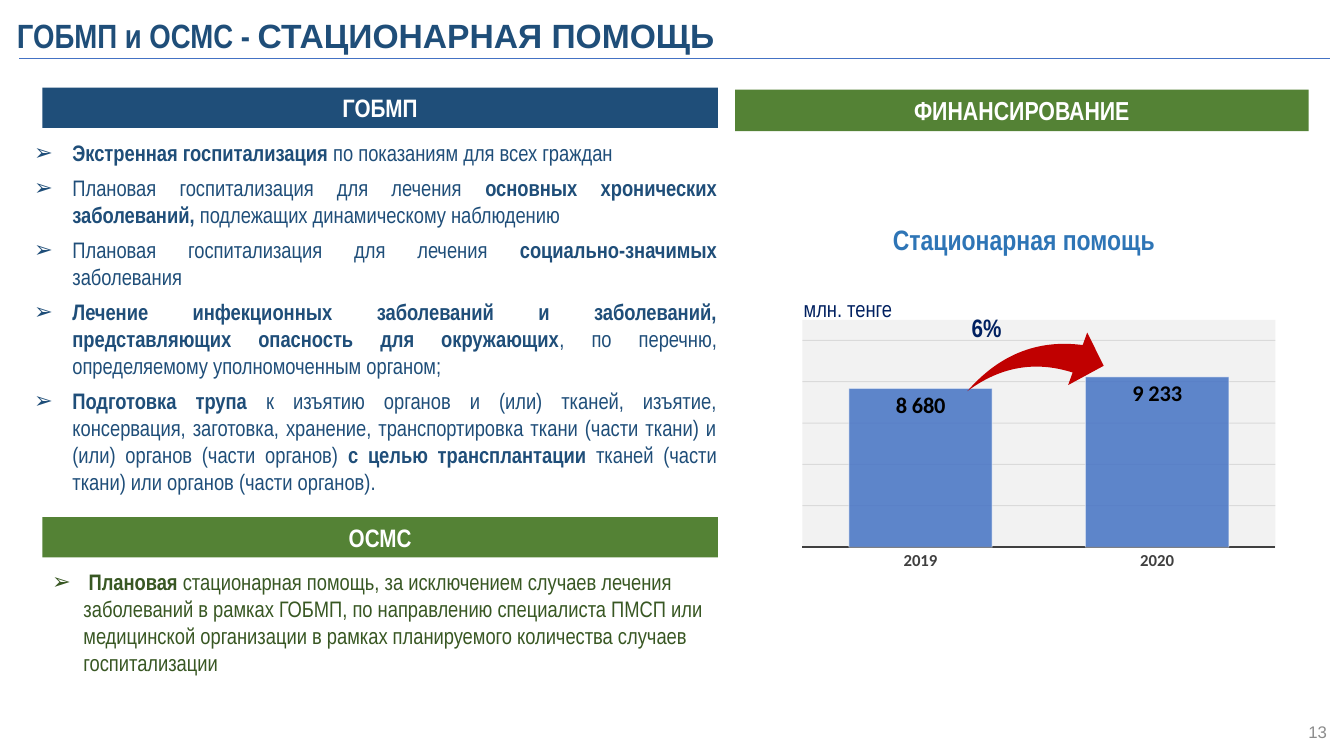
from lxml import etree
from pptx import Presentation
from pptx.chart.data import CategoryChartData
from pptx.dml.color import RGBColor
from pptx.enum.chart import XL_CHART_TYPE as ChartType, XL_LABEL_POSITION as LabelPos
from pptx.enum.chart import XL_TICK_MARK as Tick
from pptx.enum.shapes import MSO_CONNECTOR as Connector, MSO_SHAPE as Shape
from pptx.enum.text import MSO_ANCHOR as Anchor, PP_ALIGN as Align
from pptx.oxml import parse_xml
from pptx.oxml.ns import nsdecls, qn
from pptx.util import Inches, Pt

NAVY = RGBColor(0x1F, 0x4E, 0x79)
GREEN = RGBColor(0x54, 0x82, 0x35)
DARK_GREEN = RGBColor(0x38, 0x57, 0x23)
DEEP_BLUE = RGBColor(0x00, 0x20, 0x60)
BLUE = RGBColor(0x44, 0x72, 0xC4)
SKY = RGBColor(0x2E, 0x75, 0xB6)
RED = RGBColor(0xC0, 0x00, 0x00)
WHITE = RGBColor(0xFF, 0xFF, 0xFF)
BLACK = RGBColor(0x00, 0x00, 0x00)
GRAY = RGBColor(0x8C, 0x8C, 0x8C)
AXIS_GRAY = RGBColor(0x40, 0x40, 0x40)
GRID_GRAY = RGBColor(0x0D, 0x0D, 0x0D)
NARROW = "Arial Narrow"

# Each paragraph is a list of (text, bold) runs
GUARANTEED_CARE = [
    [("Экстренная госпитализация ", True), ("по показаниям для всех граждан", False)],
    [("Плановая госпитализация для лечения ", False),
     ("основных хронических заболеваний,", True),
     (" подлежащих динамическому наблюдению", False)],
    [("Плановая госпитализация для лечения ", False),
     ("социально-значимых", True), (" заболевания ", False)],
    [("Лечение инфекционных заболеваний и заболеваний, "
      "представляющих опасность для окружающих", True),
     (", по перечню, определяемому уполномоченным органом;", False)],
    [("Подготовка трупа", True),
     (" к изъятию органов и (или) тканей, изъятие, консервация, заготовка, "
      "хранение, транспортировка ткани (части ткани) и (или) органов "
      "(части органов) ", False),
     ("с целью трансплантации ", True),
     ("тканей (части ткани) или органов (части органов).", False)],
]
INSURED_CARE = [
    [(" Плановая", True),
     (" стационарная помощь, за исключением случаев лечения заболеваний в рамках "
      "ГОБМП, по направлению специалиста ПМСП или медицинской организации в рамках "
      "планируемого количества случаев госпитализации", False)],
]


def set_font(font, color, **values):
    font.color.rgb = color
    for name, value in values.items():
        setattr(font, name, value)


def add_run(paragraph, text, size, color, bold, font=NARROW):
    run = paragraph.add_run()
    run.text = text
    set_font(run.font, color, name=font, size=Pt(size), bold=bold)


def add_label(slide, box, text, size, color, bold=True, font=NARROW,
              align=Align.CENTER, anchor=Anchor.MIDDLE, wrap=True):
    frame = slide.shapes.add_textbox(*map(Inches, box)).text_frame
    frame.word_wrap = wrap
    frame.vertical_anchor = anchor
    paragraph = frame.paragraphs[0]
    paragraph.alignment = align
    add_run(paragraph, text, size, color, bold, font)
    return paragraph


def add_filled(slide, kind, box, color):
    shape = slide.shapes.add_shape(kind, *map(Inches, box))
    shape.shadow.inherit = False
    shape.fill.solid()
    shape.fill.fore_color.rgb = color
    shape.line.fill.background()
    return shape


def add_banner(slide, box, text, color, size=18):
    frame = add_filled(slide, Shape.RECTANGLE, box, color).text_frame
    frame.vertical_anchor = Anchor.TOP
    frame.paragraphs[0].alignment = Align.CENTER
    add_run(frame.paragraphs[0], text, size, WHITE, True)


def add_bullets(slide, box, items, color, indent, align, gap):
    frame = slide.shapes.add_textbox(*map(Inches, box)).text_frame
    frame.word_wrap = True
    for index, runs in enumerate(items):
        paragraph = frame.add_paragraph() if index else frame.paragraphs[0]
        paragraph.alignment = align
        paragraph.space_after = Pt(gap)
        props = paragraph._p.get_or_add_pPr()
        props.set("marL", str(Inches(indent)))
        props.set("indent", str(-Inches(indent)))
        etree.SubElement(props, qn("a:buFont"), typeface="Arial")
        etree.SubElement(props, qn("a:buChar"), char="➢")
        for text, bold in runs:
            add_run(paragraph, text, 16, color, bold)


def add_title_rule(slide):
    rule = slide.shapes.add_connector(
        Connector.STRAIGHT, Inches(13.19), Inches(0.58), Inches(0.19), Inches(0.58))
    rule.line.color.rgb = BLUE
    rule.line.width = Pt(0.5)
    etree.SubElement(rule._element.spPr, qn("a:effectLst"))


def set_line(line, color, width):
    line.color.rgb = color
    line.width = Pt(width)


def fade(chart, query, percent):
    """Set the opacity of the colours that the XPath query finds."""
    for color in chart.element.xpath(query):
        etree.SubElement(color, qn("a:alpha"), val=str(percent * 1000))


def frame_plot(chart, **layout):
    """Fix the inner plot area and give it a light background."""
    area = chart.element.xpath("c:chart/c:plotArea")[0]
    for old in area.xpath("c:layout"):
        area.remove(old)
    places = "".join(f'<c:{key} val="{value}"/>' for key, value in layout.items())
    area.insert(0, parse_xml(
        f'<c:layout {nsdecls("c")}><c:manualLayout><c:layoutTarget val="inner"/>'
        f'<c:xMode val="edge"/><c:yMode val="edge"/>{places}'
        '</c:manualLayout></c:layout>'))
    area.append(parse_xml(
        f'<c:spPr {nsdecls("c", "a")}><a:solidFill><a:srgbClr val="F2F2F2"/>'
        '</a:solidFill></c:spPr>'))


def add_funding_chart(slide, box):
    data = CategoryChartData()
    data.categories = ["2019", "2020"]
    data.add_series("Стационарная помощь", (8680, 9233))
    chart = slide.shapes.add_chart(
        ChartType.COLUMN_CLUSTERED, *map(Inches, box), data).chart
    chart.has_title = chart.has_legend = False
    set_font(chart.font, BLACK, name="Calibri", size=Pt(10))

    years = chart.category_axis
    years.major_tick_mark = Tick.NONE
    set_font(years.tick_labels.font, AXIS_GRAY, name="Calibri", size=Pt(12), bold=True)
    set_line(years.format.line, AXIS_GRAY, 1.5)
    amounts = chart.value_axis
    for name, value in {"minimum_scale": 1000, "maximum_scale": 12000,
                        "major_unit": 2000, "visible": False}.items():
        setattr(amounts, name, value)
    set_line(amounts.major_gridlines.format.line, GRID_GRAY, 0.75)

    plot = chart.plots[0]
    plot.gap_width = 65
    plot.vary_by_categories = False
    bars = plot.series[0].format
    bars.fill.solid()
    bars.fill.fore_color.rgb = BLUE
    set_line(bars.line, WHITE, 0.75)
    plot.has_data_labels = True
    labels = plot.data_labels
    for name, value in {"show_value": True, "position": LabelPos.INSIDE_END,
                        "number_format": r"#\ ##0",
                        "number_format_is_linked": False}.items():
        setattr(labels, name, value)
    set_font(labels.font, BLACK, name="Calibri", size=Pt(16), bold=True)

    fade(chart, ".//c:ser/c:spPr/a:solidFill/a:srgbClr", 85)
    fade(chart, ".//c:ser/c:spPr/a:ln//a:srgbClr", 50)
    fade(chart, ".//c:majorGridlines//a:srgbClr", 10)
    frame_plot(chart, x=0.067, y=0.034, w=0.933, h=0.826)


def add_growth_arrow(slide):
    arrow = add_filled(slide, Shape.SWOOSH_ARROW, (9.77, 3.13, 1.1, 1.05), RED)
    arrow.adjustments[0] = 0.275
    arrow.adjustments[1] = 0.265
    arrow.rotation = 26.4


def main():
    deck = Presentation()
    deck.slide_width, deck.slide_height = Inches(13.33), Inches(7.5)
    slide = deck.slides.add_slide(deck.slide_layouts[6])

    add_funding_chart(slide, (7.62, 3.08, 5.04, 2.73))
    title = add_label(slide, (0.07, 0.14, 13.26, 0.47), "ГОБМП и ОСМС - ", 24, NAVY,
                      align=Align.LEFT)
    title.line_spacing = 0.9
    add_run(title, "СТАЦИОНАРНАЯ ПОМОЩЬ", 24, NAVY, True, "Arial")
    add_title_rule(slide)

    add_banner(slide, (0.42, 0.87, 6.7, 0.4), "ГОБМП", NAVY)
    add_banner(slide, (0.42, 5.13, 6.7, 0.4), "ОСМС", GREEN)
    add_banner(slide, (7.29, 0.89, 5.69, 0.41), "ФИНАНСИРОВАНИЕ", GREEN, 18.6)
    add_bullets(slide, (0.24, 1.33, 6.97, 3.67), GUARANTEED_CARE, NAVY,
                0.38, Align.JUSTIFY, 6)
    add_bullets(slide, (0.42, 5.59, 6.7, 1.18), INSURED_CARE, DARK_GREEN,
                0.31, Align.LEFT, 0)

    add_label(slide, (9.25, 3.07, 1.07, 0.35), "6%", 18, DEEP_BLUE)
    add_label(slide, (7.56, 2.89, 1.7, 0.35), "млн. тенге", 16, DEEP_BLUE, bold=False)
    add_label(slide, (8.74, 2.16, 2.83, 0.44), "Стационарная помощь", 20, SKY,
              anchor=Anchor.TOP, wrap=False)
    add_growth_arrow(slide)
    add_label(slide, (12.86, 7.06, 0.4, 0.4), "13", 12, GRAY, bold=False,
              font="Arial", align=Align.RIGHT)
    deck.save("out.pptx")


if __name__ == "__main__":
    main()
